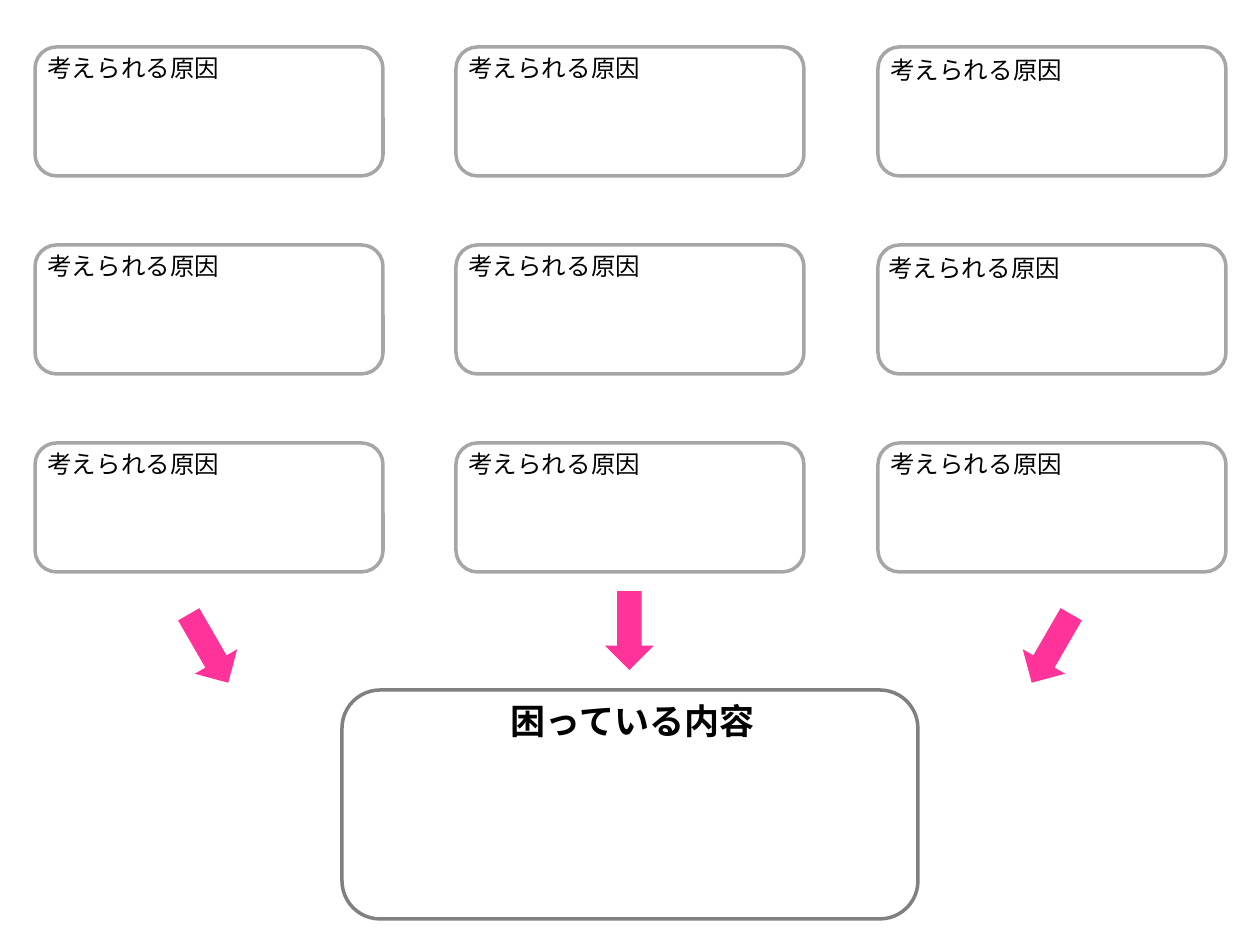
from pptx import Presentation
from pptx.dml.color import RGBColor
from pptx.enum.shapes import MSO_SHAPE
from pptx.enum.text import MSO_ANCHOR, MSO_AUTO_SIZE, PP_ALIGN
from pptx.util import Pt

ROUNDED = MSO_SHAPE.ROUNDED_RECTANGLE
DOWN_ARROW = MSO_SHAPE.DOWN_ARROW
TOP = MSO_ANCHOR.TOP
FIT_SHAPE = MSO_AUTO_SIZE.SHAPE_TO_FIT_TEXT
LEFT, CENTER = PP_ALIGN.LEFT, PP_ALIGN.CENTER

PX = 914400 / 126  # EMU per px
TITLE_ONLY = 5


def px(*lengths):
    return [round(length * PX) for length in lengths]


def write(box, text, size=14, bold=False, align=LEFT, color="000000"):
    frame = box.text_frame
    frame.word_wrap = True
    frame.auto_size = FIT_SHAPE
    frame.vertical_anchor = TOP
    paragraph = frame.paragraphs[0]
    paragraph.alignment = align
    run = paragraph.add_run()
    run.text = text
    run.font.name = "Calibri"
    run.font.size = Pt(size)
    run.font.bold = bold
    run.font.color.rgb = RGBColor.from_string(color)


prs = Presentation()
prs.slide_width, prs.slide_height = px(1260, 945)
slide = prs.slides.add_slide(prs.slide_layouts[TITLE_ONLY])
shapes = slide.shapes

# Frames: the problem at the bottom, a 3 x 3 grid of causes above it
cause_lefts = (35, 456, 878)
cause_tops = (47, 245, 443)
frames = [(342, 690, 576, 229, "808080")]
frames += [(x, y, 348, 129, "A6A6A6") for y in cause_tops for x in cause_lefts]
for x, y, width, height, color in frames:
    frame = shapes.add_shape(ROUNDED, *px(x, y, width, height))
    frame.shadow.inherit = False
    frame.fill.background()
    frame.line.color.rgb = RGBColor.from_string(color)
    frame.line.width = Pt(2)

# Arrows from each column of causes to the problem
for x, y, angle in ((605, 591, 0), (184, 609, 330), (1027, 609, 30)):
    arrow = shapes.add_shape(DOWN_ARROW, *px(x, y, 49, 79))
    arrow.rotation = angle
    arrow.shadow.inherit = False
    arrow.fill.solid()
    arrow.fill.fore_color.rgb = RGBColor.from_string("FF3399")
    arrow.line.fill.background()

# Cause labels; two in the right column sit slightly off the grid
label_shifts = {(0, 2): (0, 2), (1, 2): (-2, 2)}
for row, y in enumerate(cause_tops):
    for column, x in enumerate(cause_lefts):
        dx, dy = label_shifts.get((row, column), (0, 0))
        cause = shapes.add_textbox(*px(x + dx, y + dy, 348, 43))
        write(cause, "考えられる原因")

# Problem heading
problem = shapes.title
problem.left, problem.top, problem.width, problem.height = px(347, 693, 571, 55)
write(problem, "困っている内容", size=20, bold=True, align=CENTER)

prs.save("out.pptx")
